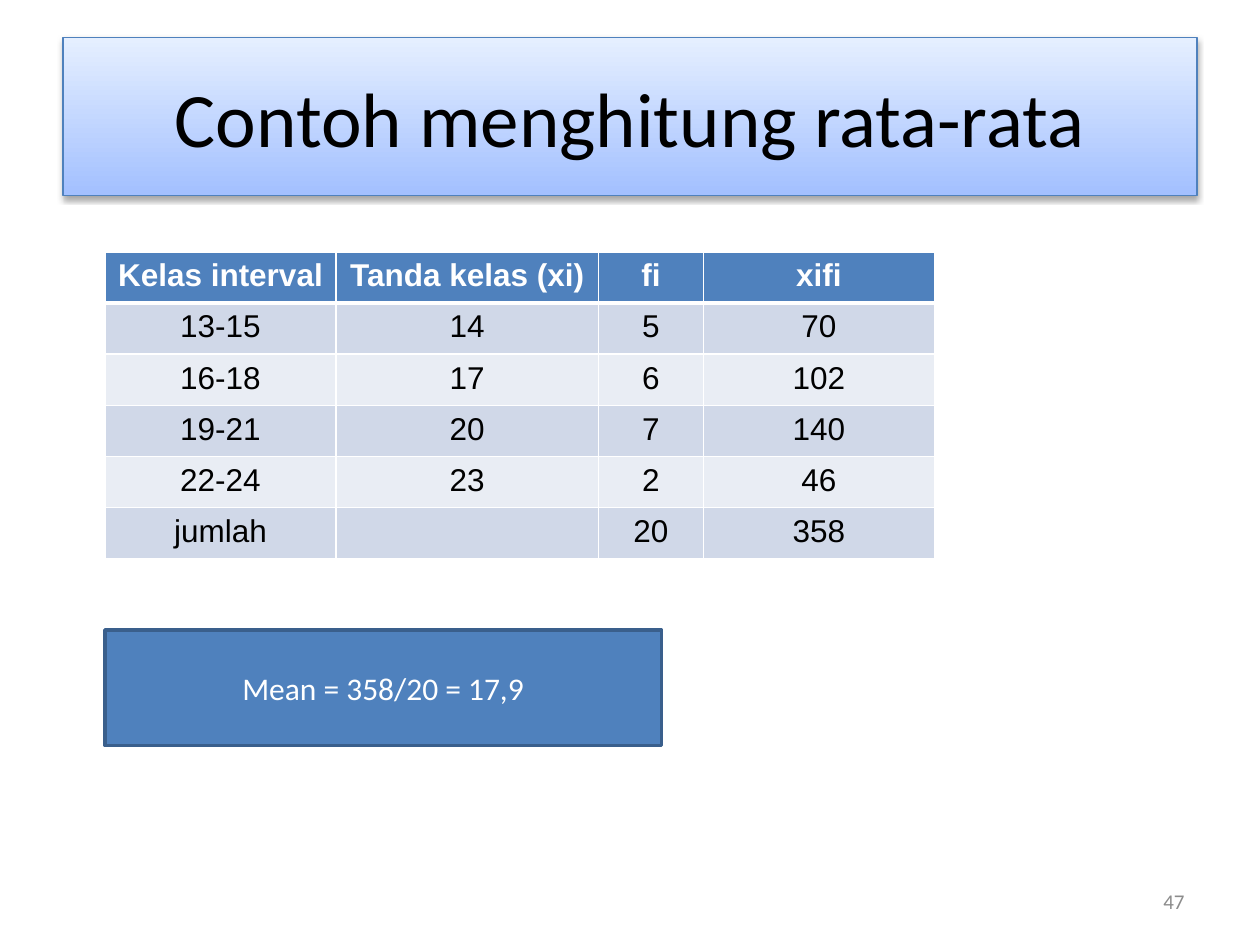
import pptx
import pptx.dml.color
import pptx.enum.shapes
import pptx.enum.text
import pptx.oxml
import pptx.oxml.ns
import pptx.util
from collections import namedtuple
from dataclasses import dataclass

Pt = pptx.util.Pt
Align = pptx.enum.text.PP_ALIGN
MIDDLE = pptx.enum.text.MSO_ANCHOR.MIDDLE
Box = namedtuple("Box", "left top width height")


@dataclass(frozen=True)
class Theme:
    text: str = "000000"
    light: str = "FFFFFF"
    accent: str = "4F81BD"
    outline: str = "3A5F8C"
    muted: str = "8C8C8C"
    bands: tuple = ("D0D8E8", "E9EDF4")
    title_gradient: tuple = ("E5EFFF", "A3C0FF")
    heading_font: str = "Calibri"
    table_font: str = "Arial"
    title_size: int = 44
    body_size: int = 18
    number_size: int = 12


THEME = Theme()

HEADINGS = ("Kelas interval", "Tanda kelas (xi)", "fi", "xifi")
FREQUENCIES = (
    ("13-15", "14", "5", "70"),
    ("16-18", "17", "6", "102"),
    ("19-21", "20", "7", "140"),
    ("22-24", "23", "2", "46"),
    ("jumlah", "", "20", "358"),
)
COLUMN_SHARES = (132, 150, 60, 132)


def rgb(value):
    return pptx.dml.color.RGBColor.from_string(value)


def write(frame, text, font, size, color, align=Align.CENTER, bold=False):
    frame.word_wrap = True
    paragraph = frame.paragraphs[0]
    paragraph.text = text
    paragraph.alignment = align
    paragraph.font.name = font
    paragraph.font.size = Pt(size)
    paragraph.font.bold = bold
    paragraph.font.color.rgb = rgb(color)


def add_soft_shadow(shape):
    shape._element.spPr.append(pptx.oxml.parse_xml(
        f'<a:effectLst {pptx.oxml.ns.nsdecls("a")}>'
        '<a:outerShdw blurRad="40000" dist="23000" dir="5400000" rotWithShape="0">'
        '<a:srgbClr val="000000"><a:alpha val="35000"/></a:srgbClr>'
        '</a:outerShdw></a:effectLst>'))


def set_border(cell, side, width):
    cell._tc.get_or_add_tcPr().append(pptx.oxml.parse_xml(
        f'<a:ln{side} {pptx.oxml.ns.nsdecls("a")} w="{Pt(width)}">'
        f'<a:solidFill><a:srgbClr val="{THEME.light}"/></a:solidFill></a:ln{side}>'))


def place_title(slide, box, text):
    title = slide.shapes.title
    title.left, title.top, title.width, title.height = map(Pt, box)
    title.fill.gradient()
    title.fill.gradient_angle = 270
    for stop, color in zip(title.fill.gradient_stops, THEME.title_gradient):
        stop.color.rgb = rgb(color)
    title.line.color.rgb = rgb(THEME.accent)
    title.line.width = Pt(0.75)
    add_soft_shadow(title)
    title.text_frame.vertical_anchor = MIDDLE
    write(title.text_frame, text, THEME.heading_font, THEME.title_size, THEME.text)


def place_table(slide, box):
    rows = (HEADINGS,) + FREQUENCIES
    table = slide.shapes.add_table(len(rows), len(HEADINGS), *map(Pt, box)).table
    for column, share in zip(table.columns, COLUMN_SHARES):
        column.width = Pt(box.width * share / sum(COLUMN_SHARES))

    for row_index, values in enumerate(rows):
        table.rows[row_index].height = Pt(box.height / len(rows))
        header = row_index == 0
        fill = THEME.accent if header else THEME.bands[(row_index - 1) % 2]
        # A heavier rule separates the header from the body
        borders = {"L": 1, "R": 1, "T": 3 if row_index == 1 else 1, "B": 3 if header else 1}
        for column_index, value in enumerate(values):
            cell = table.cell(row_index, column_index)
            for side, width in borders.items():
                set_border(cell, side, width)
            cell.fill.solid()
            cell.fill.fore_color.rgb = rgb(fill)
            write(cell.text_frame, value, THEME.table_font, THEME.body_size,
                  THEME.light if header else THEME.text, bold=header)


def place_result(slide, box, text):
    shape = slide.shapes.add_shape(pptx.enum.shapes.MSO_SHAPE.RECTANGLE, *map(Pt, box))
    shape.shadow.inherit = False
    shape.fill.solid()
    shape.fill.fore_color.rgb = rgb(THEME.accent)
    shape.line.color.rgb = rgb(THEME.outline)
    shape.line.width = Pt(2)
    shape.text_frame.vertical_anchor = MIDDLE
    write(shape.text_frame, text, THEME.heading_font, THEME.body_size, THEME.light)


def place_page_number(slide, box, text):
    frame = slide.shapes.add_textbox(*map(Pt, box)).text_frame
    frame.vertical_anchor = MIDDLE
    write(frame, text, THEME.heading_font, THEME.number_size, THEME.muted, Align.RIGHT)


def main():
    presentation = pptx.Presentation()
    presentation.slide_width, presentation.slide_height = Pt(720), Pt(540)
    slide = presentation.slides.add_slide(presentation.slide_layouts[5])

    place_page_number(slide, Box(516, 500.5, 168, 28.75), "47")
    place_title(slide, Box(36, 21.6, 648, 90), "Contoh menghitung rata-rata")
    place_result(slide, Box(60, 360, 318, 66), "Mean = 358/20 = 17,9")
    place_table(slide, Box(60, 144, 474, 175.2))

    presentation.save("out.pptx")


if __name__ == "__main__":
    main()
